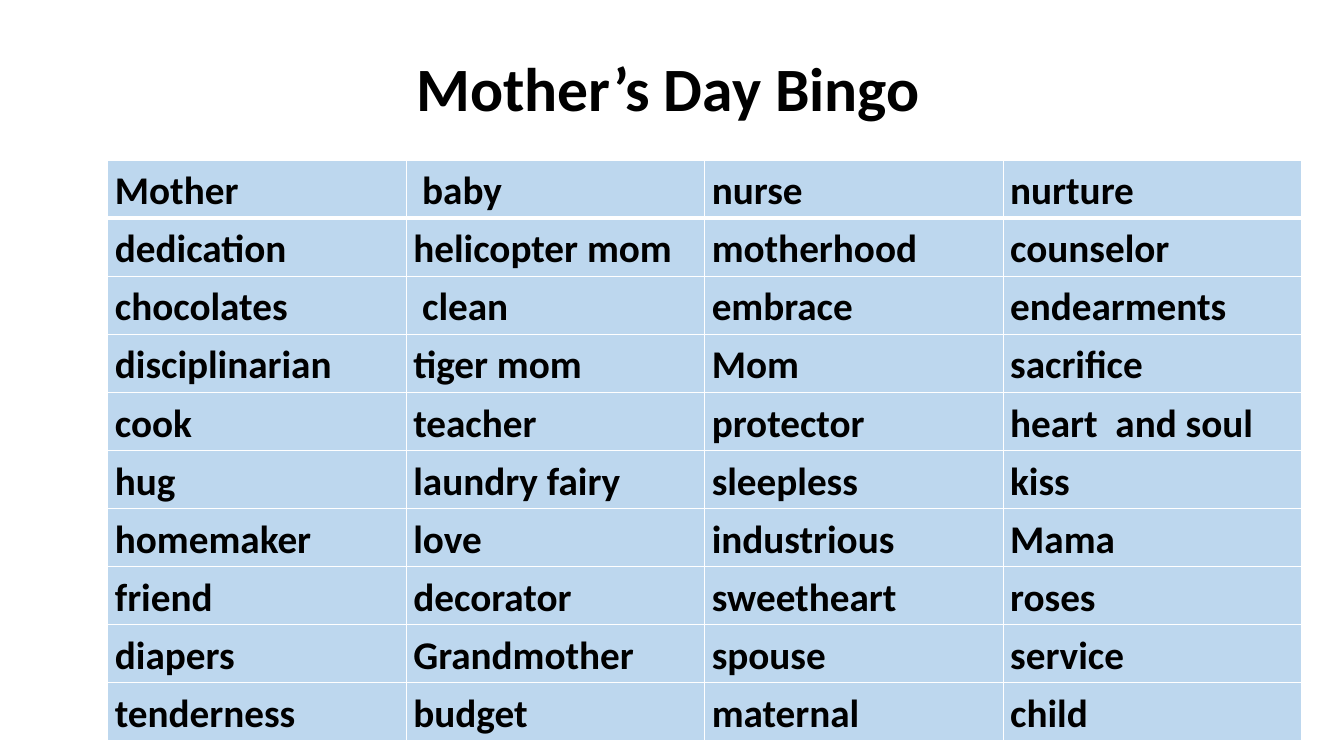
from lxml.etree import SubElement
from pptx import Presentation
from pptx.dml.color import RGBColor
from pptx.enum.text import MSO_ANCHOR, PP_ALIGN
from pptx.oxml.ns import qn
from pptx.util import Inches, Pt

TITLE = "Mother’s Day Bingo"
WORDS = [
    ("Mother", " baby", "nurse", "nurture"),
    ("dedication", "helicopter mom", "motherhood", "counselor"),
    ("chocolates", " clean", "embrace", "endearments"),
    ("disciplinarian", "tiger mom", "Mom", "sacrifice"),
    ("cook", "teacher", "protector", "heart  and soul"),
    ("hug", "laundry fairy", "sleepless", "kiss"),
    ("homemaker", "love", "industrious", "Mama"),
    ("friend", "decorator", "sweetheart", "roses"),
    ("diapers", "Grandmother", "spouse", "service"),
    ("tenderness", "budget", "maternal", "child"),
]
COLORS = {"text": "000000", "cell": "BDD7EE", "rule": "FFFFFF"}
FONT = "Calibri"
COLUMN_WIDTH, ROW_HEIGHT = 2.96, 0.576


def write(frame, text, size, align=PP_ALIGN.LEFT, spacing=1.0):
    paragraph = frame.paragraphs[0]
    paragraph.alignment = align
    paragraph.line_spacing = spacing
    run = paragraph.add_run()
    run.text = text
    run.font.name = FONT
    run.font.size = Pt(size)
    run.font.bold = True
    run.font.color.rgb = RGBColor.from_string(COLORS["text"])


def rule_cell(cell, **widths):
    properties = cell._tc.get_or_add_tcPr()
    for side, width in widths.items():
        line = SubElement(properties, qn(f"a:ln{side}"), w=str(Pt(width)))
        fill = SubElement(line, qn("a:solidFill"))
        SubElement(fill, qn("a:srgbClr"), val=COLORS["rule"])


def add_title(slide):
    title = slide.shapes.add_textbox(Inches(0.88), Inches(0.18), Inches(11.5), Inches(1.45))
    title.text_frame.word_wrap = True
    title.text_frame.vertical_anchor = MSO_ANCHOR.MIDDLE
    write(title.text_frame, TITLE, size=44, align=PP_ALIGN.CENTER, spacing=0.9)


def add_bingo(slide):
    rows, columns = len(WORDS), len(WORDS[0])
    bingo = slide.shapes.add_table(
        rows, columns, Inches(1.07), Inches(1.59),
        Inches(COLUMN_WIDTH * columns), Inches(ROW_HEIGHT * rows),
    ).table
    for r, words in enumerate(WORDS):
        bingo.rows[r].height = Inches(ROW_HEIGHT)
        for c, word in enumerate(words):
            cell = bingo.cell(r, c)
            cell.margin_left = cell.margin_right = Inches(0.07)
            cell.margin_top = cell.margin_bottom = 0
            rule_cell(cell, L=1, R=1, T=3 if r == 1 else 1, B=3 if r == 0 else 1)
            cell.fill.solid()
            cell.fill.fore_color.rgb = RGBColor.from_string(COLORS["cell"])
            write(cell.text_frame, word, size=28, spacing=1.15)


def main():
    deck = Presentation()
    deck.slide_width, deck.slide_height = Inches(13.33), Inches(7.5)
    slide = deck.slides.add_slide(deck.slide_layouts[6])
    add_title(slide)
    add_bingo(slide)
    deck.save("out.pptx")


if __name__ == "__main__":
    main()
